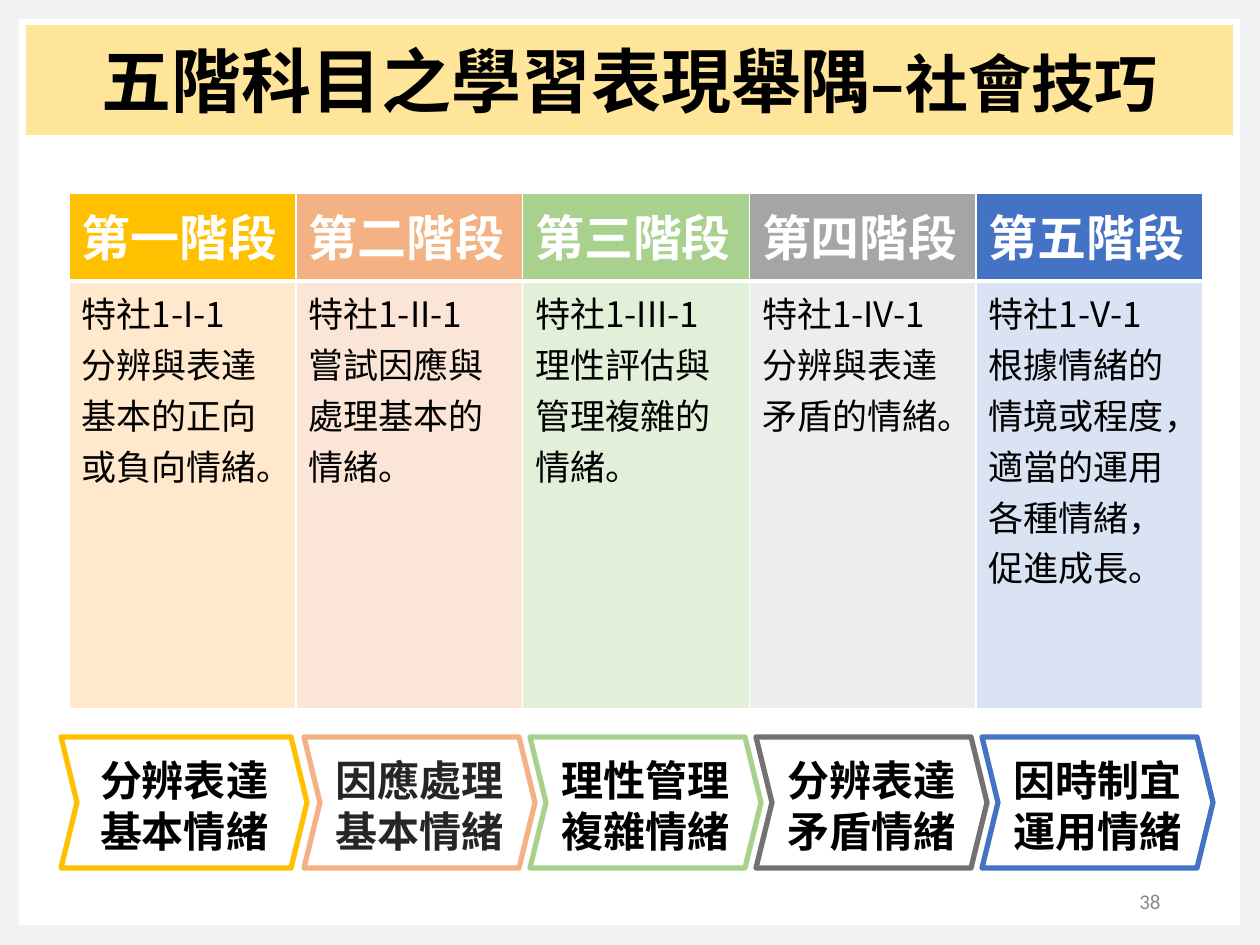
from dataclasses import dataclass

from lxml.etree import SubElement
from pptx import Presentation
from pptx.dml.color import RGBColor
from pptx.enum.shapes import MSO_SHAPE as SHAPE
from pptx.enum.text import MSO_ANCHOR as ANCHOR, MSO_AUTO_SIZE as AUTO, PP_ALIGN as ALIGN
from pptx.oxml.ns import qn
from pptx.util import Pt

PX = 914400 / 126  # EMU in one px


@dataclass(frozen=True)
class Theme:
    cjk: str = "Noto Sans CJK SC"
    latin: str = "Calibri"
    back: str = "F2F2F2"
    white: str = "FFFFFF"
    ink: str = "000000"
    soft_ink: str = "262626"
    number: str = "898989"
    banner: str = "FFC000"
    banner_alpha: int = 40
    title: int = 40
    subtitle: int = 36
    head: int = 28
    body: int = 20
    step: int = 24
    step_pitch: int = 29
    small: int = 12
    outline: int = 3


T = Theme()

# heading, head fill, body fill, code, description, step lines, step outline, step ink
STAGES = [
    ("第一階段", "FFC000", "FFE8CC", "特社1-I-1", "分辨與表達基本的正向或負向情緒。",
     "分辨表達\n基本情緒", "FFC000", T.ink),
    ("第二階段", "F4B183", "FBE5D6", "特社1-II-1", "嘗試因應與處理基本的情緒。",
     "因應處理\n基本情緒", "F4B183", T.soft_ink),
    ("第三階段", "A9D18E", "E2F0D9", "特社1-III-1", "理性評估與管理複雜的情緒。",
     "理性管理\n複雜情緒", "A9D18E", T.ink),
    ("第四階段", "A5A5A5", "EDEDED", "特社1-IV-1", "分辨與表達矛盾的情緒。",
     "分辨表達\n矛盾情緒", "767171", T.ink),
    ("第五階段", "4472C4", "DAE3F3", "特社1-V-1",
     "根據情緒的情境或程度，適當的運用各種情緒，促進成長。",
     "因時制宜\n運用情緒", "4472C4", T.ink),
]


def emu(*lengths):
    return [round(n * PX) for n in lengths]


def rgb(code):
    return RGBColor.from_string(code)


def paint(target, color):
    target.fill.solid()
    target.fill.fore_color.rgb = rgb(color)


def style_run(r, size, color, bold=False, font=T.cjk):
    r.font.size, r.font.bold, r.font.name = Pt(size), bold, font
    r.font.color.rgb = rgb(color)
    SubElement(r._r.get_or_add_rPr(), qn("a:ea"), typeface=T.cjk)


def write(tf, text, size, color, bold=False, align=ALIGN.LEFT, font=T.cjk):
    tf.text = text
    for p in tf.paragraphs:
        p.alignment = align
        for r in p.runs:
            style_run(r, size, color, bold, font)


def add_panel(s, box):
    """White page panel, behind everything else."""
    sp = s.shapes.add_shape(SHAPE.RECTANGLE, *emu(*box))
    sp.shadow.inherit = False
    paint(sp, T.white)
    sp.line.fill.background()
    s.shapes._spTree.insert(2, sp._element)


def add_title(s, box, main, sub):
    """Translucent banner holding the title."""
    sp = s.shapes.title
    sp.left, sp.top, sp.width, sp.height = emu(*box)
    paint(sp, T.banner)
    color = sp._element.spPr.find(".//" + qn("a:srgbClr"))
    SubElement(color, qn("a:alpha"), val=str(T.banner_alpha * 1000))
    tf = sp.text_frame
    tf.auto_size, tf.vertical_anchor = AUTO.NONE, ANCHOR.MIDDLE
    p = tf.paragraphs[0]
    p.alignment = ALIGN.CENTER
    for text, size in ((main, T.title), (sub, T.subtitle)):
        r = p.add_run()
        r.text = text
        style_run(r, size, T.ink, bold=True)


def set_borders(cell, **widths):
    tc_pr = cell._tc.get_or_add_tcPr()
    for side in "LRTB":
        ln = SubElement(tc_pr, qn(f"a:ln{side}"), w=str(Pt(widths.get(side, 1))))
        SubElement(SubElement(ln, qn("a:solidFill")), qn("a:srgbClr"), val=T.white)


def add_stage_table(s, box, head_height):
    """One column per stage: heading over its learning performance."""
    table = s.shapes.add_table(2, len(STAGES), *emu(*box)).table
    table.horz_banding = False
    table.rows[0].height, table.rows[1].height = emu(head_height, box[3] - head_height)
    for i, (head, head_fill, body_fill, code, text, *_) in enumerate(STAGES):
        top, body = table.cell(0, i), table.cell(1, i)
        set_borders(top, B=3)
        set_borders(body, T=3)
        paint(top, head_fill)
        paint(body, body_fill)
        write(top.text_frame, head, T.head, T.white, bold=True)
        write(body.text_frame, f"{code}\n{text}", T.body, T.ink)


def add_step(s, box, text, outline, ink):
    """Chevron with a two-line summary."""
    x, y, w, h = box
    point = 16
    mid, right, bottom = y + h / 2, x + w, y + h
    builder = s.shapes.build_freeform(*emu(x, y))
    corners = [(right - point, y), (right, mid), (right - point, bottom),
               (x, bottom), (x + point, mid)]
    builder.add_line_segments([emu(*c) for c in corners], close=True)
    sp = builder.convert_to_shape()
    sp.shadow.inherit = False
    paint(sp, T.white)
    sp.line.color.rgb, sp.line.width = rgb(outline), Pt(T.outline)
    tf = sp.text_frame
    tf.word_wrap, tf.vertical_anchor = True, ANCHOR.MIDDLE
    tf.margin_left = tf.margin_right = tf.margin_bottom = 0
    tf.margin_top = emu(5)[0]
    write(tf, text, T.step, ink, bold=True, align=ALIGN.CENTER)
    for p in tf.paragraphs:
        p.line_spacing = Pt(T.step_pitch)


def add_steps(s, box, first_width, pitch):
    """Row of chevrons; the first is wider than the others."""
    x, y, w, h = box
    second = x + first_width - 3
    step_width = w - (second - x) - pitch * (len(STAGES) - 2)
    for i, (*_, text, outline, ink) in enumerate(STAGES):
        left = second + (i - 1) * pitch if i else x
        width = step_width if i else first_width
        add_step(s, (left, y, width, h), text, outline, ink)


def add_page_number(s, box, number):
    tf = s.shapes.add_textbox(*emu(*box)).text_frame
    tf.word_wrap, tf.vertical_anchor = True, ANCHOR.MIDDLE
    write(tf, number, T.small, T.number, align=ALIGN.RIGHT, font=T.latin)


def main():
    prs = Presentation()
    prs.slide_width, prs.slide_height = emu(1260, 945)
    s = prs.slides.add_slide(prs.slide_layouts[5])
    paint(s.background, T.back)
    add_panel(s, (19, 19, 1221, 906))
    add_title(s, (26, 25, 1207, 110), "五階科目之學習表現舉隅", "–社會技巧")
    add_stage_table(s, (69, 193, 1134, 516), head_height=88)
    add_steps(s, (61, 737, 1152, 131), first_width=246, pitch=226)
    add_page_number(s, (890, 876, 283, 50), "38")
    prs.save("out.pptx")


if __name__ == "__main__":
    main()
